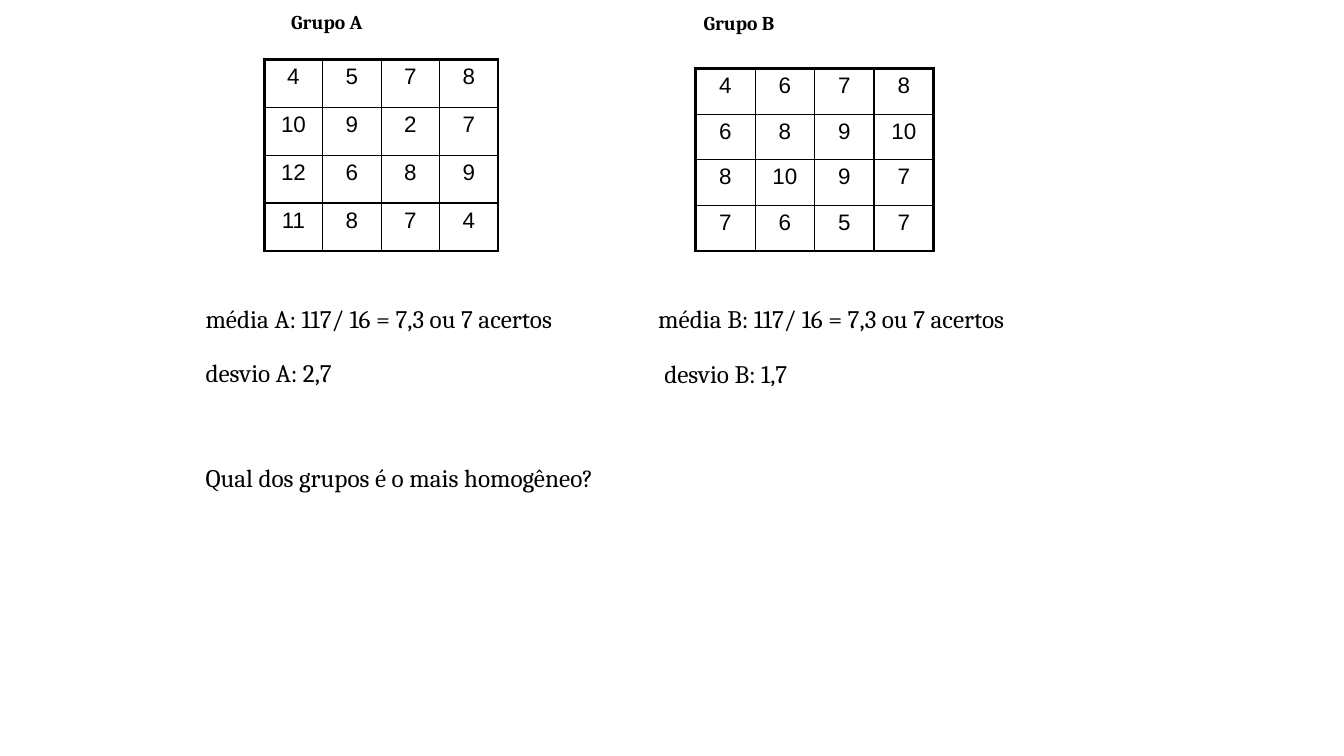
from dataclasses import dataclass

from lxml.etree import SubElement
from pptx import Presentation
from pptx.dml.color import RGBColor
from pptx.enum.text import MSO_AUTO_SIZE as AutoSize, PP_ALIGN as Align
from pptx.oxml.ns import qn
from pptx.util import Inches, Pt


@dataclass(frozen=True)
class Theme:
    ink: str = "000000"
    text_font: str = "Cambria"
    table_font: str = "Arial"
    heading_size: float = 14
    body_size: float = 18
    cell_size: float = 16
    inner_line: float = 1
    outer_line: float = 2.25


THEME = Theme()

GROUP_A = [
    [4, 5, 7, 8],
    [10, 9, 2, 7],
    [12, 6, 8, 9],
    [11, 8, 7, 4],
]
GROUP_B = [
    [4, 6, 7, 8],
    [6, 8, 9, 10],
    [8, 10, 9, 7],
    [7, 6, 5, 7],
]


def write(frame, text, font=THEME.text_font, size=THEME.body_size, bold=False, align=Align.LEFT):
    para = frame.paragraphs[0]
    para.alignment = align
    span = para.add_run()
    span.text = text
    span.font.name = font
    span.font.size = Pt(size)
    span.font.bold = bold
    span.font.color.rgb = RGBColor.from_string(THEME.ink)


def add_text(slide, text, left, top, width, height=0.4, **style):
    box = slide.shapes.add_textbox(Inches(left), Inches(top), Inches(width), Inches(height))
    box.text_frame.word_wrap = False
    box.text_frame.auto_size = AutoSize.SHAPE_TO_FIT_TEXT
    write(box.text_frame, text, **style)


def set_borders(cell, outer_sides):
    """Rule all four sides, heavier where the cell meets the table's edge."""
    properties = cell._tc.get_or_add_tcPr()
    for position, (side, is_outer) in enumerate(outer_sides.items()):
        width = THEME.outer_line if is_outer else THEME.inner_line
        line = properties.makeelement(qn(f"a:ln{side}"), {"w": str(Pt(width))})
        fill = SubElement(line, qn("a:solidFill"))
        SubElement(fill, qn("a:srgbClr"), val=THEME.ink)
        properties.insert(position, line)


def add_score_table(slide, scores, left, top, width, height):
    row_count, column_count = len(scores), len(scores[0])
    frame = slide.shapes.add_table(
        row_count, column_count, Inches(left), Inches(top), Inches(width), Inches(height)
    )
    table = frame.table
    table.first_row = table.horz_banding = False
    for r, row in enumerate(scores):
        for c, score in enumerate(row):
            cell = table.cell(r, c)
            cell.fill.background()
            write(cell.text_frame, str(score), font=THEME.table_font,
                  size=THEME.cell_size, align=Align.CENTER)
            set_borders(cell, {
                "L": c == 0,
                "R": c == column_count - 1,
                "T": r == 0,
                "B": r == row_count - 1,
            })


def main():
    deck = Presentation()
    deck.slide_width, deck.slide_height = Inches(13.33), Inches(7.5)
    slide = deck.slides.add_slide(deck.slide_layouts[6])

    add_score_table(slide, GROUP_A, 2.62, 0.59, 2.32, 1.9)
    add_score_table(slide, GROUP_B, 6.9, 0.68, 2.36, 1.81)

    heading = {"size": THEME.heading_size, "bold": True}
    add_text(slide, "Grupo A", 2.79, 0.05, 1.06, 0.34, **heading)
    add_text(slide, "Grupo B", 6.88, 0.06, 1.06, 0.34, **heading)

    add_text(slide, "média A: 117/ 16 = 7,3 ou 7 acertos", 1.94, 2.96, 4.33)
    add_text(slide, "média B: 117/ 16 = 7,3 ou 7 acertos", 6.43, 2.96, 4.33)
    add_text(slide, "desvio A: 2,7", 1.94, 3.5, 1.67)
    add_text(slide, "desvio B: 1,7", 6.49, 3.51, 1.67)
    add_text(slide, "Qual dos grupos é o mais homogêneo?", 1.94, 4.54, 4.6)

    deck.save("out.pptx")


if __name__ == "__main__":
    main()
